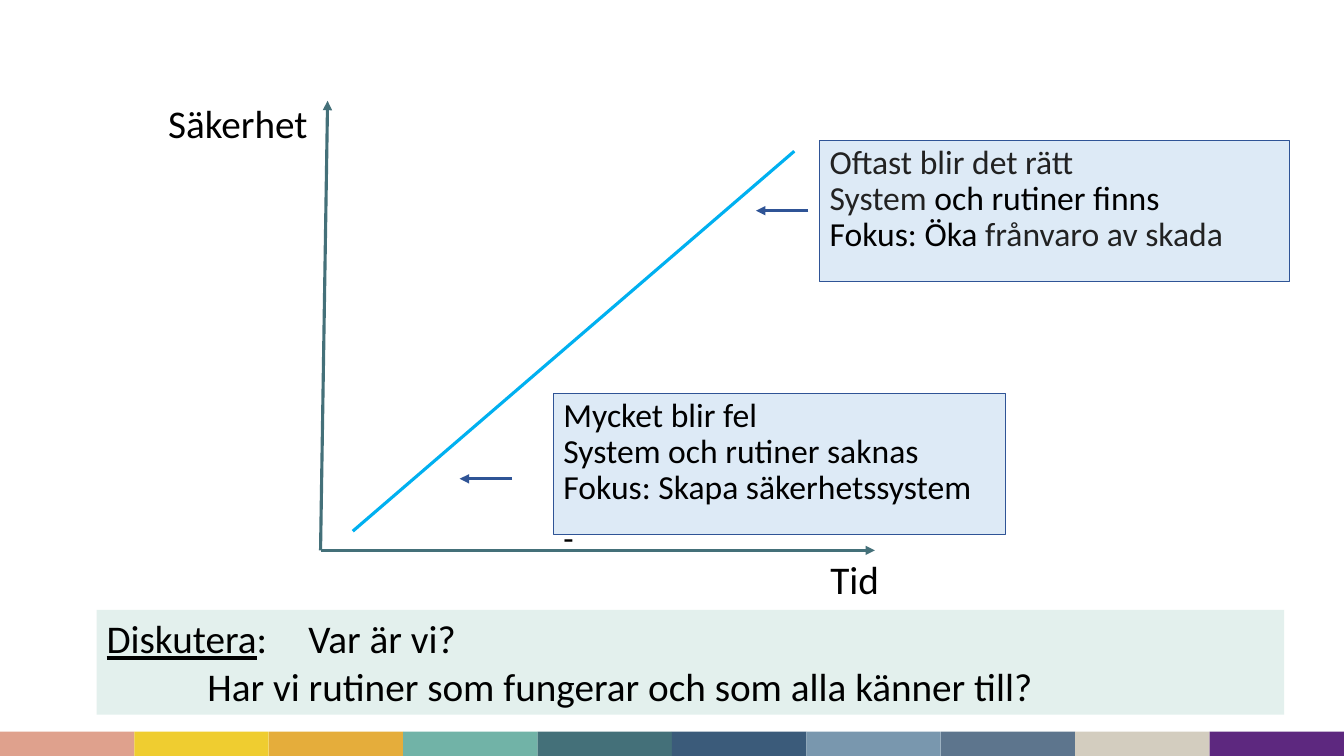
from dataclasses import dataclass

from lxml import etree
from pptx import Presentation
from pptx.dml.color import RGBColor
from pptx.enum.shapes import MSO_CONNECTOR, MSO_SHAPE
from pptx.enum.text import MSO_ANCHOR, MSO_AUTO_SIZE, PP_ALIGN
from pptx.oxml.ns import qn
from pptx.util import Inches, Pt

RECTANGLE = MSO_SHAPE.RECTANGLE
STRAIGHT = MSO_CONNECTOR.STRAIGHT
TOP = MSO_ANCHOR.TOP
NO_AUTOFIT = MSO_AUTO_SIZE.NONE
LEFT = PP_ALIGN.LEFT

COLUMNS, ROWS = 40, 30
TWO_CONTENT_LAYOUT = 3


@dataclass(frozen=True)
class Theme:
    font: str = "Calibri"
    label_size: int = 28
    callout_size: int = 24
    ink: str = "000000"
    soft_ink: str = "222222"
    callout_fill: str = "DDEAF6"
    callout_line: str = "2F5496"
    axis: str = "447079"
    progress: str = "00B0F0"
    question_fill: str = "E3F0ED"
    thin: float = 0.75
    thick: float = 2.25
    band: tuple = ("DFA18D", "EFCD30", "E5AD3B", "71B3A7", "447079",
                   "3B5B7A", "7997AE", "5D758D", "D3CDBF", "5D287F")


def write(frame, paragraphs, *, theme, size, spacing=1.0, before=()):
    """Fill a frame; each paragraph is a list of (text, run format) pairs.

    before maps paragraph numbers to the space above them, in points.
    """
    frame.word_wrap = True
    frame.auto_size = NO_AUTOFIT
    frame.vertical_anchor = TOP
    gaps = dict(before)
    for number, runs in enumerate(paragraphs):
        paragraph = frame.paragraphs[0] if number == 0 else frame.add_paragraph()
        paragraph.alignment = LEFT
        paragraph.line_spacing = spacing
        paragraph.space_before = Pt(gaps.get(number, 0))
        for text, style in runs:
            run = paragraph.add_run()
            run.text = text
            run.font.name = theme.font
            run.font.size = Pt(size)
            run.font.underline = style.get("underline", False)
            run.font.color.rgb = RGBColor.from_string(style.get("color", theme.ink))


class Board:
    """One slide with its theme; lengths are columns and rows of the grid."""

    def __init__(self, deck, theme):
        self.theme = theme
        self.column = deck.slide_width / COLUMNS
        self.row = deck.slide_height / ROWS
        self.slide = deck.slides.add_slide(deck.slide_layouts[TWO_CONTENT_LAYOUT])
        title, *self.bodies = self.slide.placeholders
        title.element.getparent().remove(title.element)

    def place(self, x, y, *extent):
        scales = (self.column, self.row) * 2
        return [round(n * scale) for n, scale in zip((x, y, *extent), scales)]

    def block(self, area, fill):
        block = self.slide.shapes.add_shape(RECTANGLE, *self.place(*area))
        block.shadow.inherit = False
        block.fill.solid()
        block.fill.fore_color.rgb = RGBColor.from_string(fill)
        block.line.fill.background()
        return block

    def callout(self, area, paragraphs, **style):
        """Turn the next body placeholder into a framed box without bullets."""
        body = self.bodies.pop(0)
        body.left, body.top, body.width, body.height = self.place(*area)
        body.fill.solid()
        body.fill.fore_color.rgb = RGBColor.from_string(self.theme.callout_fill)
        body.line.color.rgb = RGBColor.from_string(self.theme.callout_line)
        body.line.width = Pt(self.theme.thin)
        write(body.text_frame, paragraphs, theme=self.theme,
              size=self.theme.callout_size, spacing=0.9, **style)
        for paragraph in body.text_frame.paragraphs:
            properties = paragraph._p.get_or_add_pPr()
            properties.set("marL", "0")
            properties.set("indent", "0")
            etree.SubElement(properties, qn("a:buNone"))

    def label(self, area, text):
        box = self.slide.shapes.add_textbox(*self.place(*area))
        write(box.text_frame, [[(text, {})]], theme=self.theme,
              size=self.theme.label_size)

    def question(self, area, paragraphs):
        panel = self.block(area, self.theme.question_fill)
        write(panel.text_frame, paragraphs, theme=self.theme,
              size=self.theme.label_size)

    def line(self, start, end, color, arrow=True):
        line = self.slide.shapes.add_connector(
            STRAIGHT, *self.place(*start), *self.place(*end))
        line.line.color.rgb = RGBColor.from_string(color)
        line.line.width = Pt(self.theme.thick)
        if arrow:
            etree.SubElement(line.line._get_or_add_ln(), qn("a:tailEnd"), type="triangle")
        etree.SubElement(line.element.spPr, qn("a:effectLst"))

    def pointer(self, x, y):
        self.line((x, y), (x - 1.56, y), self.theme.callout_line)


def main():
    deck = Presentation()
    deck.slide_width, deck.slide_height = Inches(13.33), Inches(7.5)
    theme = Theme()
    board = Board(deck, theme)
    soft = {"color": theme.soft_ink}

    band_width = COLUMNS / len(theme.band)
    for number, color in enumerate(theme.band):
        board.block((number * band_width, 29.03, band_width, 0.97), color)

    board.callout((16.47, 15.6, 13.47, 5.6), [
        [("Mycket blir fel", {})],
        [("System och rutiner saknas", {})],
        [("Fokus: Skapa säkerhetssystem", {})],
        [("-", {})],
    ], before={3: 10})
    board.callout((24.39, 5.56, 13.98, 5.6), [
        [("Oftast blir det rätt", soft)],
        [("System ", soft), ("och rutiner finns", {})],
        [("Fokus: Öka ", {}), ("frånvaro av skada", soft)],
    ])

    origin = (9.54, 21.84)
    board.line((23.64, 6), (10.5, 21.08), theme.progress, arrow=False)
    board.line(origin, (26.04, 21.84), theme.axis)
    board.line(origin, (9.75, 4), theme.axis)
    board.label((4.71, 3.76, 6.36, 2.28), "Säkerhet")
    board.label((24.42, 21.84, 3.69, 2.28), "Tid")
    board.pointer(24.06, 8.36)
    board.pointer(15.24, 19)

    board.question((2.88, 24.2, 35.34, 4.16), [
        [("Diskutera", {"underline": True}), (":\tVar är vi?", {})],
        [("\t\tHar vi rutiner som fungerar och som alla känner till?", {})],
    ])
    deck.save("out.pptx")


if __name__ == "__main__":
    main()
